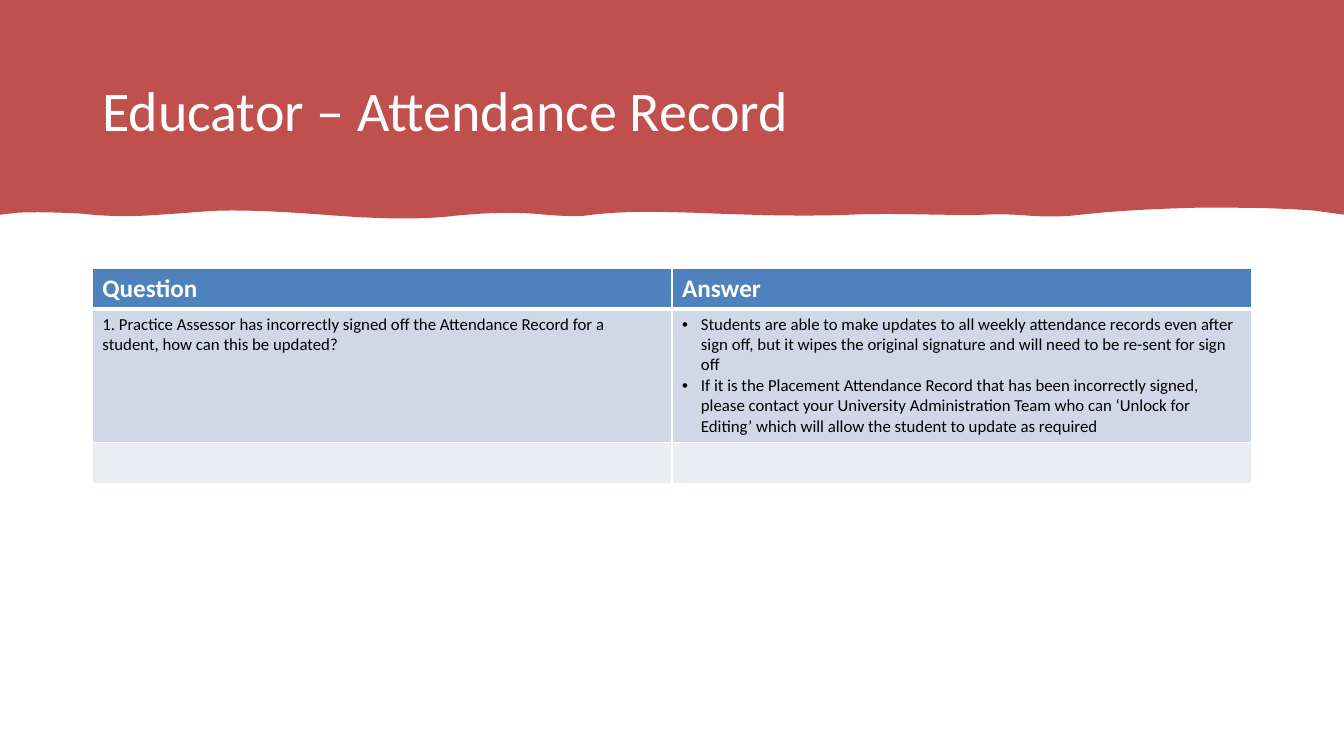
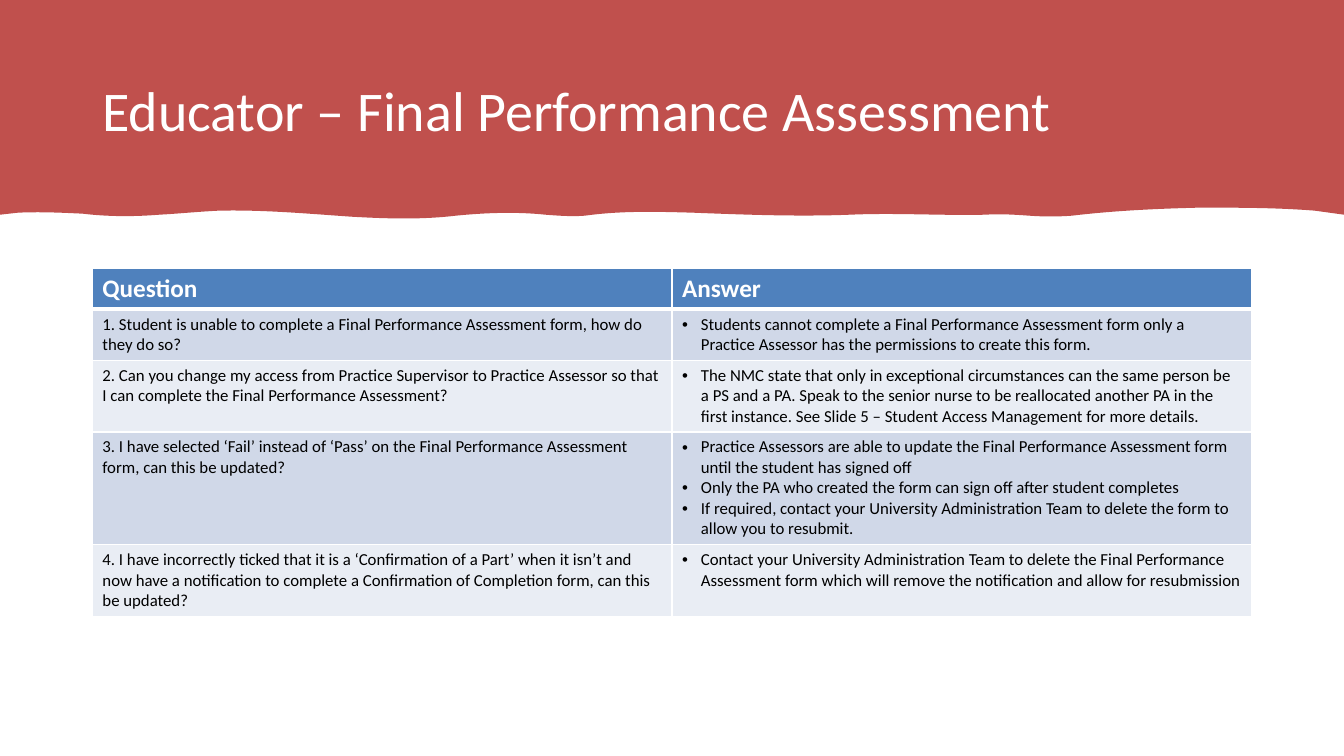
from dataclasses import dataclass

from lxml.etree import SubElement
from pptx import Presentation
from pptx.dml.color import RGBColor as Rgb
from pptx.enum.text import MSO_ANCHOR as Anchor
from pptx.oxml.ns import qn
from pptx.util import Inches, Pt


@dataclass(frozen=True)
class Theme:
    font: str = "Calibri"
    title_size: int = 40
    header_size: int = 18
    body_size: int = 12
    band: str = "C0504D"
    header: str = "4F81BD"
    stripes: tuple = ("D0D8E8", "E9EDF4")
    light: str = "FFFFFF"
    dark: str = "000000"


theme = Theme()

# Grid: 160 columns with a margin of 11 on each side, 75 rows
WIDTH, HEIGHT = Inches(40) // 3, Inches(7.5)
COL, ROW = WIDTH / 160, HEIGHT / 75
MARGIN, CONTENT = int(11 * COL), int(138 * COL)
BULLET_INDENT = Pt(13.5)
LINE, PADDING = 2.04 * ROW, ROW

# Lower edge of the band, right to left, in hundredths of an inch:
# cubic curves of two control points and an end point
WAVE_START = (1304, 209)
WAVE = [
    ((1266, 206), (1228, 206), (1190, 206)),
    ((1148, 207), (1105, 209), (1063, 214)),
    ((1049, 215), (1035, 215), (1021, 214)),
    ((1007, 213), (992, 212), (977, 213)),
    ((933, 214), (888, 211), (843, 213)),
    ((791, 215), (739, 213), (687, 211)),
    ((651, 210), (616, 209), (580, 214)),
    ((567, 215), (554, 214), (541, 213)),
    ((512, 210), (482, 211), (452, 214)),
    ((418, 218), (384, 217), (349, 215)),
    ((305, 212), (261, 208), (217, 209)),
    ((197, 210), (177, 212), (158, 213)),
    ((133, 215), (107, 215), (82, 212)),
    ((61, 211), (40, 210), (18, 211)),
]
BAND_WIDTH, BAND_EDGE = 1333, 213

# Each slide: title, then rows of a question, its answers and the lines they fill
SLIDES = [
    ("Educator – Attendance Record", [
        ("1. Practice Assessor has incorrectly signed off the Attendance Record "
         "for a student, how can this be updated?",
         ["Students are able to make updates to all weekly attendance records even "
          "after sign off, but it wipes the original signature and will need to be "
          "re-sent for sign off",
          "If it is the Placement Attendance Record that has been incorrectly signed, "
          "please contact your University Administration Team who can ‘Unlock for "
          "Editing’ which will allow the student to update as required"], 6),
        ("", [], 1.5),
    ]),
    ("Educator – Final Performance Assessment", [
        ("1. Student is unable to complete a Final Performance Assessment form, how "
         "do they do so?",
         ["Students cannot complete a Final Performance Assessment form only a "
          "Practice Assessor has the permissions to create this form."], 2),
        ("2. Can you change my access from Practice Supervisor to Practice Assessor "
         "so that I can complete the Final Performance Assessment?",
         ["The NMC state that only in exceptional circumstances can the same person "
          "be a PS and a PA. Speak to the senior nurse to be reallocated another PA "
          "in the first instance. See Slide 5 – Student Access Management for more "
          "details."], 3),
        ("3. I have selected ‘Fail’ instead of ‘Pass’ on the Final Performance "
         "Assessment form, can this be updated?",
         ["Practice Assessors are able to update the Final Performance Assessment "
          "form until the student has signed off",
          "Only the PA who created the form can sign off after student completes",
          "If required, contact your University Administration Team to delete the "
          "form to allow you to resubmit."], 5),
        ("4. I have incorrectly ticked that it is a ‘Confirmation of a Part’ when it "
         "isn’t and now have a notification to complete a Confirmation of Completion "
         "form, can this be updated?",
         ["Contact your University Administration Team to delete the Final "
          "Performance Assessment form which will remove the notification and allow "
          "for resubmission"], 3),
    ]),
]


def write(frame, lines, size, color, bold=False, bulleted=False):
    """Fill a text frame, one paragraph a line, in one style."""
    frame.text = "\n".join(lines)
    for paragraph in frame.paragraphs:
        if bulleted and paragraph.text:
            props = paragraph._p.get_or_add_pPr()
            props.set("marL", str(BULLET_INDENT))
            props.set("indent", str(-BULLET_INDENT))
            SubElement(props, qn("a:buFont"), typeface="Arial")
            SubElement(props, qn("a:buChar"), char="•")
        font = paragraph.font
        font.name, font.size, font.bold = theme.font, Pt(size), bold
        font.color.rgb = Rgb.from_string(color)


def paint(cell, fill, bottom_width=1):
    """Give a cell white borders and a plain fill."""
    props = cell._tc.get_or_add_tcPr()
    for side, width in (("L", 1), ("R", 1), ("T", 1), ("B", bottom_width)):
        border = SubElement(props, qn(f"a:ln{side}"), w=str(Pt(width)))
        SubElement(SubElement(border, qn("a:solidFill")), qn("a:srgbClr"), val=theme.light)
    cell.fill.solid()
    cell.fill.fore_color.rgb = Rgb.from_string(fill)


deck = Presentation()
deck.slide_width, deck.slide_height = WIDTH, HEIGHT

for title, entries in SLIDES:
    slide = deck.slides.add_slide(deck.slide_layouts[6])

    # Band: straight sides first, then the wave's segments become curves
    outline = slide.shapes.build_freeform(0, 0, scale=WIDTH / BAND_WIDTH)
    outline.add_line_segments(
        [(BAND_WIDTH, 0), (BAND_WIDTH, BAND_EDGE), WAVE_START]
        + [curve[-1] for curve in WAVE] + [(0, BAND_EDGE)])
    band = outline.convert_to_shape()
    segments = list(band._element.iter(qn("a:lnTo")))[3:]
    for segment, curve in zip(segments, WAVE):
        segment.tag = qn("a:cubicBezTo")
        segment.remove(segment[0])
        for x, y in curve:
            SubElement(segment, qn("a:pt"), x=str(x), y=str(y))
    band.shadow.inherit = False
    band.fill.solid()
    band.fill.fore_color.rgb = Rgb.from_string(theme.band)
    band.line.fill.background()

    # Title
    heading = slide.shapes.add_textbox(
        MARGIN, int(4 * ROW), CONTENT, int(14.5 * ROW)).text_frame
    heading.word_wrap = True
    heading.vertical_anchor = Anchor.MIDDLE
    write(heading, [title], theme.title_size, theme.light)
    heading.paragraphs[0].line_spacing = 0.9

    # Questions and answers
    row_count = len(entries) + 1
    faq = slide.shapes.add_table(
        row_count, 2, MARGIN, int(26.6 * ROW), CONTENT, int(4.06 * ROW) * row_count).table
    for column, label in enumerate(("Question", "Answer")):
        cell = faq.cell(0, column)
        paint(cell, theme.header, bottom_width=3)
        write(cell.text_frame, [label], theme.header_size, theme.light, bold=True)
    for row, (question, answers, line_count) in enumerate(entries, start=1):
        faq.rows[row].height = int(line_count * LINE + PADDING)
        for column, lines in enumerate(([question], answers)):
            cell = faq.cell(row, column)
            paint(cell, theme.stripes[(row - 1) % 2])
            write(cell.text_frame, lines, theme.body_size, theme.dark, bulleted=column == 1)

deck.save("out.pptx")
